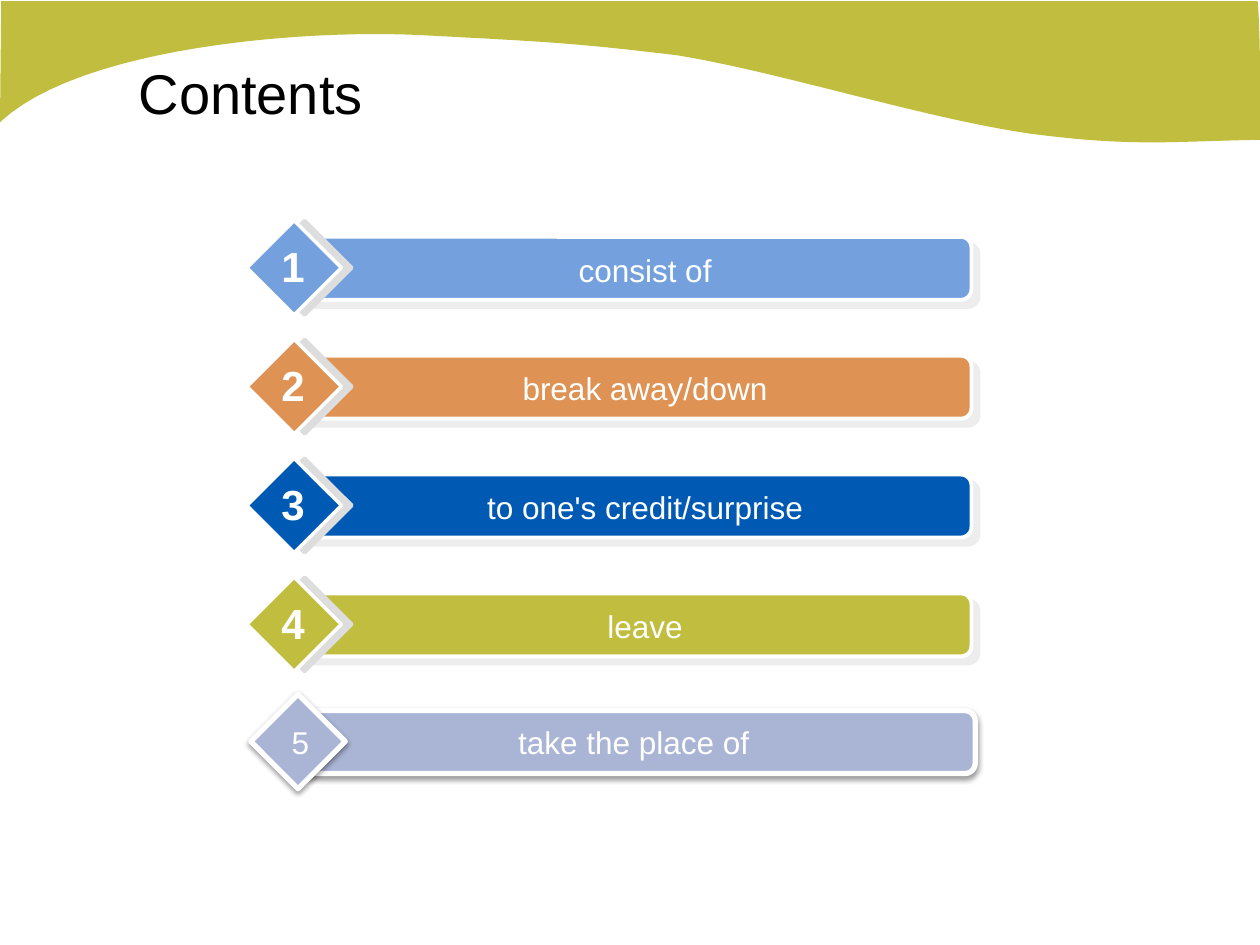
import pptx
import pptx.util
import pptx.dml.color
import pptx.enum.shapes
import pptx.enum.text
import pptx.oxml
import pptx.oxml.ns

Inches = pptx.util.Inches
Pt = pptx.util.Pt
MSO_SHAPE = pptx.enum.shapes.MSO_SHAPE
ALIGN = pptx.enum.text.PP_ALIGN
MIDDLE = pptx.enum.text.MSO_ANCHOR.MIDDLE
FIT = pptx.enum.text.MSO_AUTO_SIZE.SHAPE_TO_FIT_TEXT

# Shadows: colour, opacity %, blur pt, distance pt, angle in degrees
BAR_SHADOW = ("DDDDDD", 50, 0, 5.7, 45)
DIAMOND_SHADOW = ("DDDDDD", 100, 0, 6, 0)
SOFT_SHADOW = ("000000", 38, 3.1, 1.6, 90)


def rgb(value):
    return pptx.dml.color.RGBColor.from_string(value)


def add_shadow(s, color, opacity, blur, distance, angle):
    effects = s._element.spPr.find(pptx.oxml.ns.qn("a:effectLst"))
    effects.append(pptx.oxml.parse_xml(
        f'<a:outerShdw {pptx.oxml.ns.nsdecls("a")} blurRad="{Pt(blur)}" '
        f'dist="{Pt(distance)}" dir="{angle * 60000}" algn="ctr" rotWithShape="0">'
        f'<a:srgbClr val="{color}"><a:alpha val="{opacity * 1000}"/></a:srgbClr>'
        '</a:outerShdw>'))


def write(s, text, size, color="FFFFFF", align=ALIGN.CENTER, bold=False, wrap=False):
    tf = s.text_frame
    tf.word_wrap = wrap
    p = tf.paragraphs[0]
    p.text = text
    p.alignment = align
    p.font.name = "Arial"
    p.font.size = Pt(size)
    p.font.bold = bold
    p.font.color.rgb = rgb(color)
    return tf


def add_box(shapes, kind, box, color, line_width, shadow):
    s = shapes.add_shape(kind, *(Inches(v) for v in box))
    s.shadow.inherit = False
    s.fill.solid()
    s.fill.fore_color.rgb = rgb(color)
    s.line.color.rgb = rgb("FFFFFF")
    s.line.width = Pt(line_width)
    add_shadow(s, *shadow)
    return s


def add_bar_and_diamond(shapes, left, top, color, widths, shadows):
    bar = add_box(shapes, MSO_SHAPE.ROUNDED_RECTANGLE,
                  (left + 0.33, top + 0.13, 5.42, 0.5), color, widths[0], shadows[0])
    diamond = add_box(shapes, MSO_SHAPE.DIAMOND,
                      (left, top, 0.75, 0.75), color, widths[1], shadows[1])
    return bar, diamond


def add_label(shapes, box, text, size, **style):
    s = shapes.add_textbox(*(Inches(v) for v in box))
    write(s, text, size, **style).auto_size = FIT


def add_row(slide, left, top, number, text, color):
    shapes = slide.shapes.add_group_shape().shapes
    add_bar_and_diamond(shapes, left, top, color, (2.25, 2), (BAR_SHADOW, DIAMOND_SHADOW))
    add_label(shapes, (left + 0.91, top + 0.19, 4.5, 0.4), text, 18, wrap=True)
    add_label(shapes, (left + 0.17, top + 0.11, 0.39, 0.5), number, 24, bold=True)


def add_last_row(slide, left, top, number, text, color):
    shapes = slide.shapes.add_group_shape().shapes
    bar, diamond = add_bar_and_diamond(shapes, left, top, color, (3, 3),
                                       (SOFT_SHADOW, SOFT_SHADOW))
    write(bar, text, 18).vertical_anchor = MIDDLE
    write(diamond, number, 18, align=ALIGN.RIGHT).vertical_anchor = MIDDLE


def bezier(points, steps=24):
    for i in range(1, steps + 1):
        t = i / steps
        weights = ((1 - t) ** 3, 3 * t * (1 - t) ** 2, 3 * t * t * (1 - t), t ** 3)
        yield tuple(sum(w * pt[axis] for w, pt in zip(weights, points)) for axis in (0, 1))


def add_wave(slide, color):
    start = (0, 0.97)
    curves = [
        ((0.64, 0.37), (2.42, 0.23), (3.36, 0.28)),
        ((4.31, 0.33), (4.56, 0.34), (5.38, 0.44)),
        ((6.18, 0.57), (7.34, 0.94), (8.17, 1.06)),
        ((9, 1.17), (9.32, 1.12), (10, 1.11)),
        ((10.01, 0.59), (9.99, 0.01), (9.98, 0.01)),
    ]
    outline = [start]
    for curve in curves:
        outline.extend(bezier((outline[-1], *curve)))
    outline.append((0.01, 0.01))
    points = [(Inches(x), Inches(y)) for x, y in outline]
    builder = slide.shapes.build_freeform(*points[0])
    builder.add_line_segments(points[1:], close=True)
    s = builder.convert_to_shape()
    s.shadow.inherit = False
    s.fill.solid()
    s.fill.fore_color.rgb = rgb(color)
    s.line.fill.background()
    # Send behind the title
    slide.shapes._spTree.insert(2, s._element)


def set_title(slide, left, top, width, height, text):
    s = slide.shapes.title
    s.left, s.top, s.width, s.height = (Inches(v) for v in (left, top, width, height))
    tf = write(s, text, 32, color="000000", align=ALIGN.LEFT, wrap=True)
    tf.vertical_anchor = MIDDLE


def main():
    prs = pptx.Presentation()
    prs.slide_width, prs.slide_height = Inches(10), Inches(7.5)
    slide = prs.slides.add_slide(prs.slide_layouts[5])

    # Header
    add_wave(slide, "C1BE3F")
    set_title(slide, 1, 0.42, 4.92, 0.62, "Contents")

    # Contents list
    rows = [
        ("consist of", "74A1DE"),
        ("break away/down", "DE9254"),
        ("to one's credit/surprise", "005AB4"),
        ("leave", "C1BE3F"),
    ]
    first_top, last_top = 1.75, 4.58
    pitch = (last_top - first_top) / (len(rows) - 1)
    for i, (text, color) in enumerate(rows):
        add_row(slide, 1.96, first_top + i * pitch, str(i + 1), text, color)
    add_last_row(slide, 1.99, 5.51, "5", "take the place of", "AAB5D6")

    prs.save("out.pptx")


if __name__ == "__main__":
    main()
